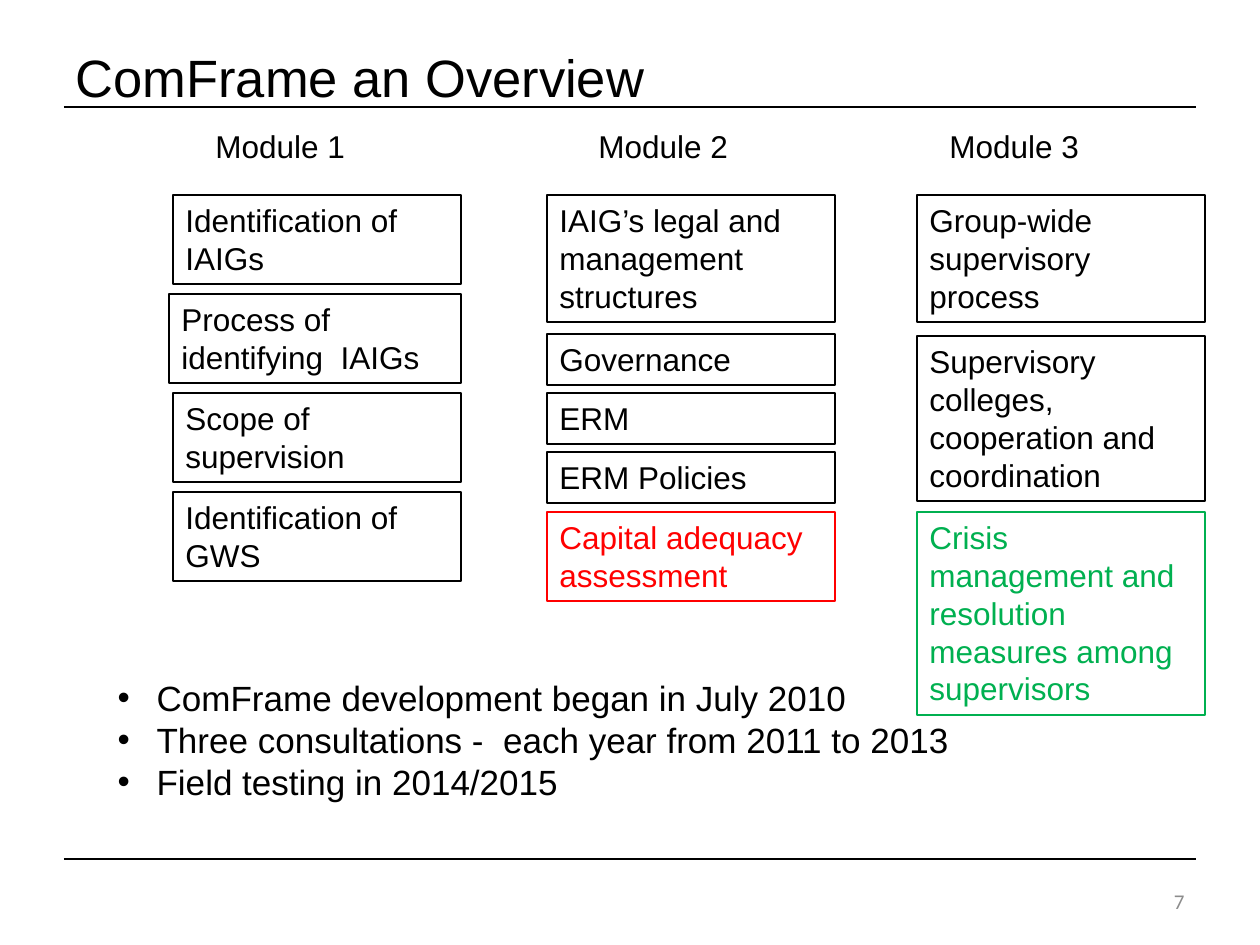
import pptx
import pptx.dml.color
import pptx.enum.shapes
import pptx.enum.text
import pptx.oxml.ns
import pptx.util
from lxml import etree

EMU_PER_PX = 914400 / 126
COLOURS = {"black": "000000", "red": "FF0000", "green": "00B050", "grey": "8C8C8C"}
ALIGN = pptx.enum.text.PP_ALIGN
ANCHOR = pptx.enum.text.MSO_ANCHOR

BOX_WIDTH = 288
LINE_HEIGHT = 38
BOX_PADDING = 13
MODULES = [
    ("Module 1", 203, 173, [
        (195, 2, "Identification of IAIGs", "black"),
        (294, 2, "Process of identifying  IAIGs", "black"),
        (393, 2, "Scope of supervision", "black"),
        (492, 2, "Identification of GWS", "black"),
    ]),
    ("Module 2", 586, 547, [
        (195, 3, "IAIG’s legal and management structures", "black"),
        (334, 1, "Governance", "black"),
        (393, 1, "ERM", "black"),
        (452, 1, "ERM Policies", "black"),
        (512, 2, "Capital adequacy assessment", "red"),
    ]),
    ("Module 3", 937, 917, [
        (195, 3, "Group-wide supervisory process", "black"),
        (336, 4, "Supervisory colleges, cooperation and coordination", "black"),
        (512, 5, "Crisis management and resolution measures among supervisors", "green"),
    ]),
]
WIDER_BOX = "Process of identifying  IAIGs"
WIDER_BY = 4
MILESTONES = [
    "ComFrame development began in July 2010",
    "Three consultations -  each year from 2011 to 2013",
    "Field testing in 2014/2015",
]


def px(length):
    return pptx.util.Emu(round(length * EMU_PER_PX))


def colour(name):
    return pptx.dml.color.RGBColor.from_string(COLOURS[name])


def place(shape, left, top, width, height):
    shape.left, shape.top = px(left), px(top)
    shape.width, shape.height = px(width), px(height)


def write(shape, text, size, shade="black", font="Arial", align=ALIGN.LEFT, anchor=ANCHOR.TOP):
    frame = shape.text_frame
    frame.text = text
    frame.word_wrap = True
    frame.auto_size = pptx.enum.text.MSO_AUTO_SIZE.NONE
    frame.vertical_anchor = anchor
    for para in frame.paragraphs:
        para.alignment = align
        for span in para.runs:
            span.font.size = pptx.util.Pt(size)
            span.font.name = font
            span.font.color.rgb = colour(shade)


def add_rule(page, top):
    rule = page.shapes.add_connector(
        pptx.enum.shapes.MSO_CONNECTOR.STRAIGHT, px(64), px(top), px(1196), px(top))
    rule.line.color.rgb = colour("black")
    rule.line.width = pptx.util.Pt(0.75)
    etree.SubElement(rule._element.spPr, pptx.oxml.ns.qn("a:effectLst"))


def add_label(page, text, left, top, width, height, size, **style):
    label = page.shapes.add_textbox(px(left), px(top), px(width), px(height))
    write(label, text, size, **style)


def add_topic(page, text, left, top, width, lines, shade):
    box = page.shapes.add_shape(
        pptx.enum.shapes.MSO_SHAPE.RECTANGLE,
        px(left), px(top), px(width), px(BOX_PADDING + LINE_HEIGHT * lines))
    box.shadow.inherit = False
    box.fill.background()
    box.line.color.rgb = colour(shade)
    box.line.width = pptx.util.Pt(0.75)
    write(box, text, 18, shade)


def add_module(page, name, name_left, left, topics):
    add_label(page, name, name_left, 121, 208, 51, 18)
    for top, lines, text, shade in topics:
        extra = WIDER_BY if text == WIDER_BOX else 0
        add_topic(page, text, left - extra, top, BOX_WIDTH + extra, lines, shade)


def fill_milestones(body):
    place(body, 105, 670, 1131, 140)
    write(body, "\n".join(MILESTONES), 20)
    for para in body.text_frame.paragraphs:
        para.space_before = pptx.util.Pt(0)
        properties = para._p.get_or_add_pPr()
        properties.set("marL", str(px(39)))
        properties.set("indent", str(px(-39)))
        bullet_font = etree.SubElement(properties, pptx.oxml.ns.qn("a:buFont"))
        bullet_font.set("typeface", "Arial")
        bullet = etree.SubElement(properties, pptx.oxml.ns.qn("a:buChar"))
        bullet.set("char", "•")


def main():
    deck = pptx.Presentation()
    deck.slide_width, deck.slide_height = px(1260), px(945)
    page = deck.slides.add_slide(deck.slide_layouts[1])
    title, body = page.placeholders
    place(title, 63, 38, 1134, 77)
    write(title, "ComFrame an Overview", 30, anchor=ANCHOR.MIDDLE)
    for top in (107, 859):
        add_rule(page, top)
    for module in MODULES:
        add_module(page, *module)
    fill_milestones(body)
    add_label(page, "7", 903, 876, 294, 50, 12, shade="grey", font="Calibri",
              align=ALIGN.RIGHT, anchor=ANCHOR.MIDDLE)
    deck.save("out.pptx")


if __name__ == "__main__":
    main()
